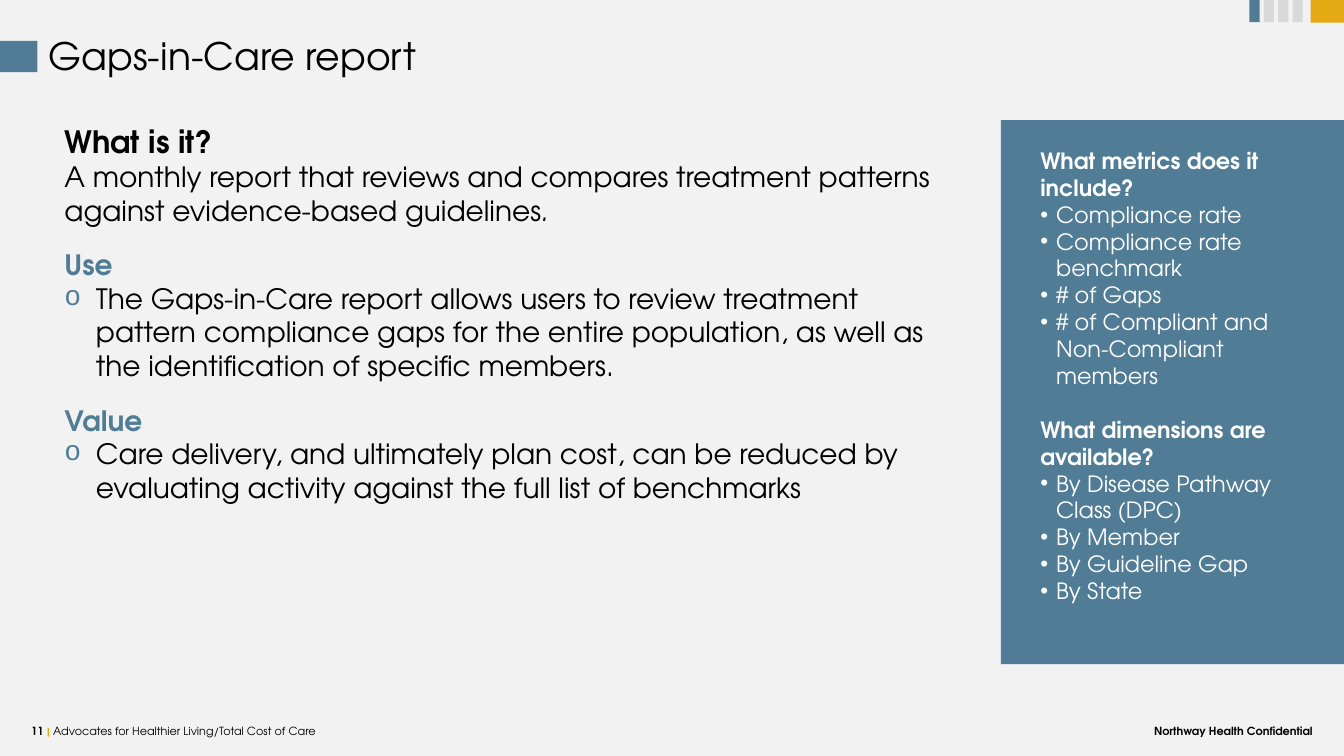
import pptx
import pptx.dml.color
import pptx.enum.shapes
import pptx.enum.text
import pptx.util
from lxml import etree

Pt = pptx.util.Pt
ALIGN = pptx.enum.text.PP_ALIGN
FONT = "TeX Gyre Adventor"
BLUE, GOLD, GREY = "517C96", "E5A913", "D9D9D9"
BLACK, WHITE, BACKGROUND = "000000", "FFFFFF", "F2F2F2"
WIDTH, HEIGHT = 1920, 1080

TITLE = "Gaps-in-Care report"
INTRO_HEADING = "What is it?"
INTRO = ("A monthly report that reviews and compares treatment patterns "
         "against evidence-based guidelines")
SECTIONS = [
    ("Use", "The Gaps-in-Care report allows users to review treatment pattern "
            "compliance gaps for the entire population, as well as the "
            "identification of specific members."),
    ("Value", "Care delivery, and ultimately plan cost, can be reduced by "
              "evaluating activity against the full list of benchmarks"),
]
SIDEBAR = [
    ("What metrics does it include?",
     ["Compliance rate", "Compliance rate benchmark", "# of Gaps",
      "# of Compliant and Non-Compliant members"]),
    ("What dimensions are available?",
     ["By Disease Pathway Class (DPC)", "By Member", "By Guideline Gap",
      "By State"]),
]
PAGE_NUMBER = "11 "
FOOTER = "Advocates for Healthier Living/Total Cost of Care"
CONFIDENTIAL = "Northway Health Confidential"
STRIPES = [BLUE, GREY, GREY, GREY]


def rgb(color):
    return pptx.dml.color.RGBColor.from_string(color)


def add_rectangle(slide, left, top, width, height, color):
    shape = slide.shapes.add_shape(
        pptx.enum.shapes.MSO_SHAPE.RECTANGLE,
        Pt(left), Pt(top), Pt(width), Pt(height))
    shape.shadow.inherit = False
    shape.fill.solid()
    shape.fill.fore_color.rgb = rgb(color)
    shape.line.fill.background()


def add_text_frame(slide, left, top, width, height):
    box = slide.shapes.add_textbox(Pt(left), Pt(top), Pt(width), Pt(height))
    box.text_frame.word_wrap = True
    return box.text_frame


def add_run(paragraph, text, size, color=BLACK, bold=False, italic=False):
    run = paragraph.add_run()
    run.text = text
    run.font.name = FONT
    run.font.size = Pt(size)
    run.font.color.rgb = rgb(color)
    run.font.bold = bold
    run.font.italic = italic


def add_text(frame, text, size, align=ALIGN.LEFT, after=0, **run_format):
    """Append a paragraph, using the frame's empty first one if it is free."""
    paragraph = frame.paragraphs[0]
    if paragraph.runs:
        paragraph = frame.add_paragraph()
    paragraph.alignment = align
    paragraph.space_after = Pt(after)
    add_run(paragraph, text, size, **run_format)
    return paragraph


def add_bullet(paragraph, character, indent, font, color):
    properties = paragraph._p.get_or_add_pPr()
    properties.set("marL", str(Pt(indent)))
    properties.set("indent", str(-Pt(indent)))
    namespace = pptx.oxml.ns.qn
    bullet_color = etree.SubElement(properties, namespace("a:buClr"))
    etree.SubElement(bullet_color, namespace("a:srgbClr"), val=color)
    etree.SubElement(properties, namespace("a:buFont"), typeface=font)
    etree.SubElement(properties, namespace("a:buChar"), char=character)


def add_body(slide):
    frame = add_text_frame(slide, 85, 171.5, 1255, 654.5)
    add_text(frame, INTRO_HEADING, 44, bold=True)
    intro = add_text(frame, INTRO, 40, after=30)
    add_run(intro, ".", 40, italic=True)
    for heading, detail in SECTIONS:
        add_text(frame, heading, 40, color=BLUE, bold=True)
        after = 0 if heading == SECTIONS[-1][0] else 30
        paragraph = add_text(frame, detail, 40, after=after)
        add_bullet(paragraph, "o", 45, "Courier New", BLUE)


def add_sidebar(slide):
    add_rectangle(slide, 1430, 171.5, WIDTH - 1430, 777.5, BLUE)
    frame = add_text_frame(slide, 1479, 206.5, 375, 667)
    for heading, items in SIDEBAR:
        paragraph = add_text(frame, heading, 32, color=WHITE, bold=True)
        for item in items:
            paragraph = add_text(frame, item, 32, color=WHITE)
            add_bullet(paragraph, "•", 22.5, "Arial", WHITE)
        if heading != SIDEBAR[-1][0]:
            paragraph.space_after = Pt(38.4)


def add_corner_stripes(slide):
    for index, color in enumerate(STRIPES):
        add_rectangle(slide, 1785 + 20.5 * index, 0, 14.5, 31.5, color)
    add_rectangle(slide, 1872.5, 0, WIDTH - 1872.5, 32.5, GOLD)


def add_footer(slide):
    frame = add_text_frame(slide, 37.5, 1031.5, 745, 26.5)
    paragraph = add_text(frame, PAGE_NUMBER, 16, bold=True)
    add_run(paragraph, "| ", 16, color=GOLD, bold=True)
    add_run(paragraph, FOOTER, 16)
    frame = add_text_frame(slide, 1582.5, 1031.5, 300, 26.5)
    add_text(frame, CONFIDENTIAL, 16, align=ALIGN.RIGHT, bold=True)


def main():
    presentation = pptx.Presentation()
    presentation.slide_width, presentation.slide_height = Pt(WIDTH), Pt(HEIGHT)
    slide = presentation.slides.add_slide(presentation.slide_layouts[6])
    slide.background.fill.solid()
    slide.background.fill.fore_color.rgb = rgb(BACKGROUND)

    add_footer(slide)
    add_rectangle(slide, 0, 58.5, 53.5, 44.5, BLUE)
    add_text(add_text_frame(slide, 62.5, 42.5, WIDTH - 62.5, 84), TITLE, 54)
    add_corner_stripes(slide)
    add_body(slide)
    add_sidebar(slide)
    presentation.save("out.pptx")


if __name__ == "__main__":
    main()
